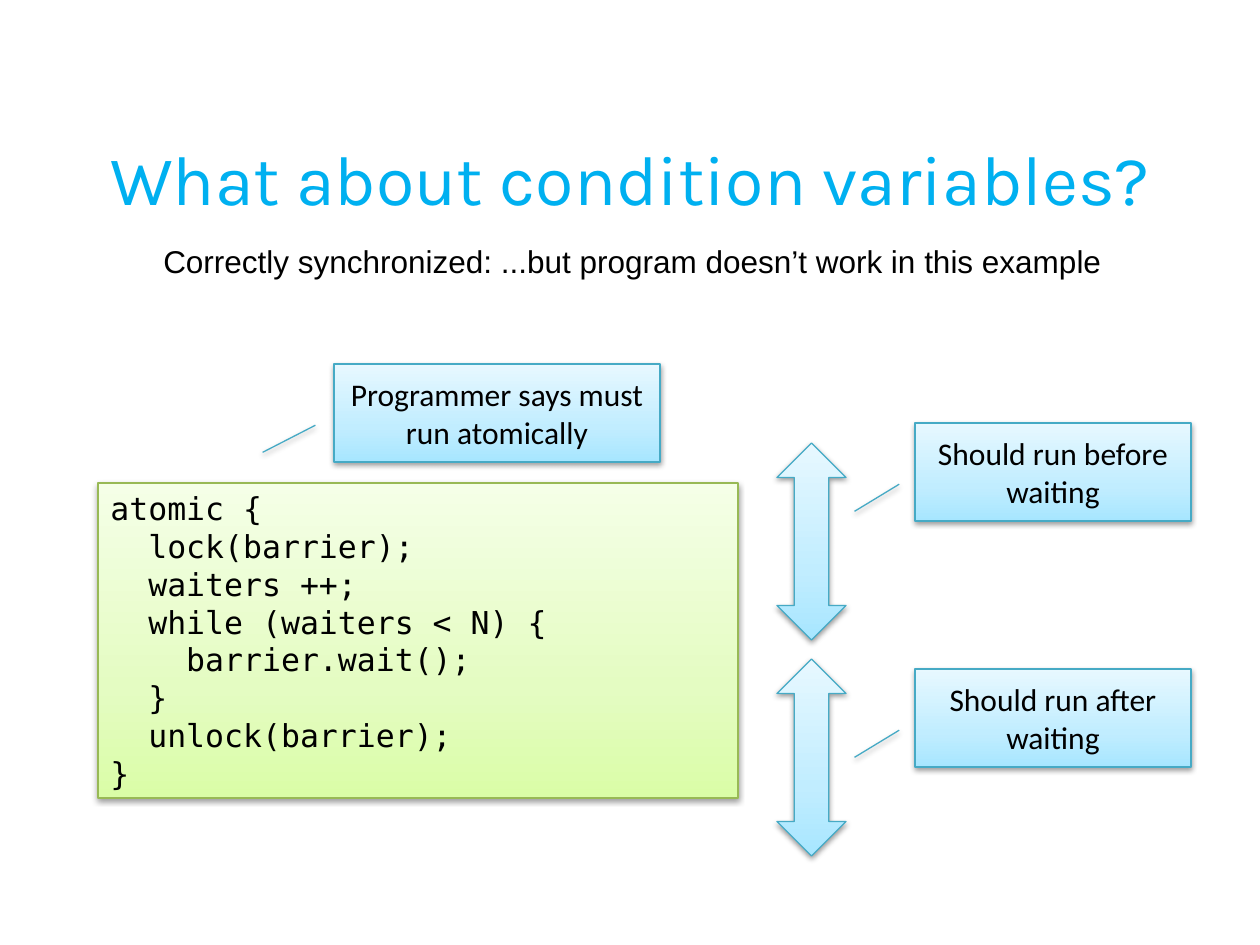
from copy import deepcopy

from lxml.etree import SubElement
from pptx import Presentation
from pptx.dml.color import RGBColor
from pptx.enum.shapes import MSO_SHAPE
from pptx.enum.text import MSO_ANCHOR, PP_ALIGN
from pptx.oxml.ns import qn
from pptx.util import Emu, Pt

PX = 914400 / 126
COLORS = {"title": "00B0F0", "text": "000000", "shadow": "000000"}
THEMES = {
    "green": {"stops": [(0, "DAFDA7"), (0.35, "E4FCC2"), (1, "F5FFE7")], "line": "98B955"},
    "blue": {"stops": [(0, "A7E6FF"), (0.35, "C1EDFF"), (1, "E7F8FF")], "line": "46AAC5"},
}

TITLE = "What about condition variables?"
SUBTITLE = "Correctly synchronized: ...but program doesn’t work in this example"
CODE = [
    "atomic {",
    "  lock(barrier);",
    "  waiters ++;",
    "  while (waiters < N) {",
    "    barrier.wait();",
    "  }",
    "  unlock(barrier);",
    "}",
]
ARROW_TOPS = [443, 659]
CALLOUTS = [  # text, left, top, width
    ("Should run before waiting", 915, 423, 276),
    ("Should run after waiting", 915, 669, 276),
    ("Programmer says must run atomically", 334, 364, 326),
]
CALLOUT_HEIGHT = 98
CALLOUT_LINE = [0.625, -0.057, 0.902, -0.219]


def px(*lengths):
    return [Emu(round(length * PX)) for length in lengths]


def write(frame, lines, font, size, color="text", align=PP_ALIGN.CENTER,
          anchor=MSO_ANCHOR.MIDDLE, wrap=True):
    frame.word_wrap = wrap
    frame.vertical_anchor = anchor
    for i, line in enumerate(lines):
        paragraph = frame.paragraphs[0] if i == 0 else frame.add_paragraph()
        paragraph.alignment = align
        run = paragraph.add_run()
        run.text = line
        run.font.name = font
        run.font.size = Pt(size)
        run.font.color.rgb = RGBColor.from_string(COLORS[color])


def add_shadow(shape):
    shape.shadow.inherit = False
    effects = shape._element.spPr.find(qn("a:effectLst"))
    shadow = SubElement(effects, qn("a:outerShdw"), blurRad="40000", dist="20000",
                        dir="5400000", rotWithShape="0")
    color = SubElement(shadow, qn("a:srgbClr"), val=COLORS["shadow"])
    SubElement(color, qn("a:alpha"), val="38000")


def add_panel(kind, box, theme):
    shape = slide.shapes.add_shape(kind, *px(*box))
    shape.fill.gradient()
    shape.fill.gradient_angle = 90
    # The default gradient has two stops; a third is needed
    stop_list = shape._element.spPr.find(".//" + qn("a:gsLst"))
    stop_list.append(deepcopy(stop_list[0]))
    for stop, (position, color) in zip(shape.fill.gradient_stops, THEMES[theme]["stops"]):
        stop.position = position
        stop.color.rgb = RGBColor.from_string(color)
    shape.line.color.rgb = RGBColor.from_string(THEMES[theme]["line"])
    shape.line.width = Pt(0.75)
    add_shadow(shape)
    return shape


presentation = Presentation()
presentation.slide_width, presentation.slide_height = px(1260, 945)
slide = presentation.slides.add_slide(presentation.slide_layouts[6])

# Title and subtitle
title = slide.shapes.add_textbox(*px(63, 98, 1134, 158))
write(title.text_frame, [TITLE], "Karla", 40, "title")
subtitle = slide.shapes.add_textbox(*px(146, 236, 973, 50))
write(subtitle.text_frame, [SUBTITLE], "Arial", 18, anchor=MSO_ANCHOR.TOP, wrap=False)

# Code listing
code = add_panel(MSO_SHAPE.RECTANGLE, (98, 483, 640, 315), "green")
write(code.text_frame, CODE, "DejaVu Sans Mono", 18, align=PP_ALIGN.LEFT)

# Arrows spanning the code before and after the wait
for top in ARROW_TOPS:
    add_panel(MSO_SHAPE.UP_DOWN_ARROW, (777, top, 69, 197), "blue")

# Callouts
for text, left, top, width in CALLOUTS:
    callout = add_panel(MSO_SHAPE.LINE_CALLOUT_1, (left, top, width, CALLOUT_HEIGHT), "blue")
    for i, value in enumerate(CALLOUT_LINE):
        callout.adjustments[i] = value
    write(callout.text_frame, [text], "Calibri", 18)

presentation.save("out.pptx")
